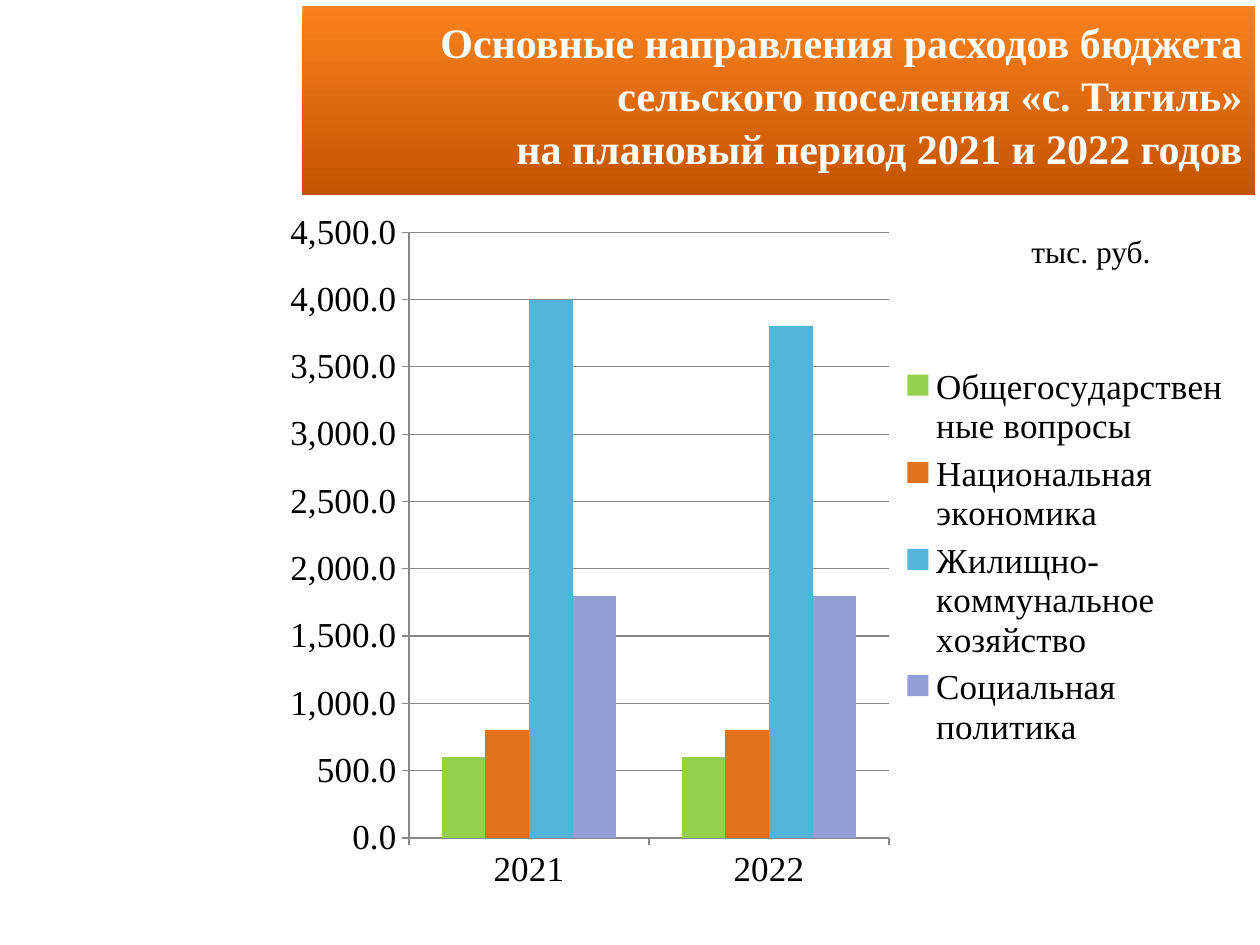
"""Build the slide on budget spending by area in 2021 and 2022."""
from lxml.etree import SubElement
from pptx import Presentation
from pptx.chart.data import CategoryChartData
from pptx.dml.color import RGBColor
from pptx.enum.chart import XL_CHART_TYPE, XL_LEGEND_POSITION, XL_TICK_MARK
from pptx.enum.shapes import MSO_SHAPE
from pptx.enum.text import MSO_ANCHOR, PP_ALIGN
from pptx.oxml.ns import qn
from pptx.util import Pt

TITLE = ("Основные направления расходов бюджета сельского поселения «с. Тигиль»\v"
         "на плановый период 2021 и 2022 годов")
UNIT = "тыс. руб."
YEARS = ["2021", "2022"]
SPENDING = [
    ("Общегосударственные вопросы", (600, 600), "94D14B"),
    ("Национальная экономика", (800, 800), "E2711C"),
    ("Жилищно-коммунальное хозяйство", (4000, 3800), "52B4D8"),
    ("Социальная политика", (1800, 1800), "949ED6"),
]
BANNER_COLORS = ("FB811D", "C45400")
BANNER_BOX = (172.8, 3.6, 544.3, 108)
UNIT_BOX = (569.5, 128.9, 108, 28.8)
CHART_BOX = (150.5, 116.6, 558.7, 403.9)
PLOT_LAYOUT = {"layoutTarget": "inner", "xMode": "edge", "yMode": "edge",
               "x": 0.149, "y": 0.04, "w": 0.491, "h": 0.857}
LEGEND_LAYOUT = {"xMode": "edge", "yMode": "edge",
                 "x": 0.65, "y": 0.22, "w": 0.34, "h": 0.56}
BANNER_FRAME = {"word_wrap": True, "vertical_anchor": MSO_ANCHOR.TOP,
                "margin_top": Pt(4.5)}
VALUE_AXIS = {"minimum_scale": 0, "maximum_scale": 4500, "major_unit": 500,
              "has_major_gridlines": True}


def rgb(code):
    return RGBColor.from_string(code)


def points(box):
    return [Pt(length) for length in box]


def set_all(target, values):
    for name, value in values.items():
        setattr(target, name, value)


def set_font(font, size, color="000000", bold=False):
    set_all(font, {"name": "Times New Roman", "size": Pt(size), "bold": bold})
    font.color.rgb = rgb(color)


def write(frame, text, align, *font_style):
    paragraph = frame.paragraphs[0]
    paragraph.text = text
    paragraph.alignment = align
    for run in paragraph.runs:
        set_font(run.font, *font_style)
    return paragraph


def place(layout, values):
    for old in list(layout):
        layout.remove(old)
    manual = SubElement(layout, qn("c:manualLayout"))
    for name, value in values.items():
        SubElement(manual, qn(f"c:{name}")).set("val", str(value))


def add_banner(slide):
    banner = slide.shapes.add_shape(MSO_SHAPE.RECTANGLE, *points(BANNER_BOX))
    banner.shadow.inherit = False
    banner.line.fill.background()
    banner.fill.gradient()
    banner.fill.gradient_angle = 270
    for stop, color in zip(banner.fill.gradient_stops, BANNER_COLORS):
        stop.color.rgb = rgb(color)
    set_all(banner.text_frame, BANNER_FRAME)
    heading = write(banner.text_frame, TITLE, PP_ALIGN.RIGHT, 24, "FFFFFF", True)
    heading.line_spacing = 1.05


def add_spending_chart(slide):
    data = CategoryChartData(number_format="#,##0.0")
    data.categories = YEARS
    for area, amounts, _ in SPENDING:
        data.add_series(area, amounts)
    chart = slide.shapes.add_chart(
        XL_CHART_TYPE.COLUMN_CLUSTERED, *points(CHART_BOX), data).chart
    set_font(chart.font, 20)
    set_all(chart, {"has_title": False, "has_legend": True})
    set_all(chart.legend, {"position": XL_LEGEND_POSITION.RIGHT,
                           "include_in_layout": False})
    set_font(chart.legend.font, 20)

    plot = chart.plots[0]
    set_all(plot, {"gap_width": 150, "overlap": 0, "vary_by_categories": False})
    for series, (_, _, color) in zip(plot.series, SPENDING):
        series.format.fill.solid()
        series.format.fill.fore_color.rgb = rgb(color)

    set_all(chart.value_axis, VALUE_AXIS)
    set_all(chart.value_axis.tick_labels,
            {"number_format": "#,##0.0", "number_format_is_linked": False})
    for axis in (chart.category_axis, chart.value_axis):
        axis.major_tick_mark = XL_TICK_MARK.OUTSIDE
    for part in (chart.category_axis, chart.value_axis,
                 chart.value_axis.major_gridlines):
        part.format.line.color.rgb = rgb("878787")
        part.format.line.width = Pt(0.75)

    plot_area = chart.element.find(".//" + qn("c:plotArea"))
    plot_layout = plot_area.find(qn("c:layout"))
    if plot_layout is None:
        plot_layout = SubElement(plot_area, qn("c:layout"))
        plot_area.insert(0, plot_layout)
    place(plot_layout, PLOT_LAYOUT)
    legend = chart.element.find(".//" + qn("c:legend"))
    legend_layout = legend.find(qn("c:layout"))
    if legend_layout is None:
        legend_layout = SubElement(legend, qn("c:layout"))
        legend.find(qn("c:legendPos")).addnext(legend_layout)
    place(legend_layout, LEGEND_LAYOUT)


def main():
    presentation = Presentation()
    set_all(presentation, {"slide_width": Pt(720), "slide_height": Pt(540)})
    slide = presentation.slides.add_slide(presentation.slide_layouts[6])
    add_banner(slide)
    unit = slide.shapes.add_textbox(*points(UNIT_BOX))
    unit.text_frame.word_wrap = True
    write(unit.text_frame, UNIT, PP_ALIGN.CENTER, 18)
    add_spending_chart(slide)
    presentation.save("out.pptx")


if __name__ == "__main__":
    main()
